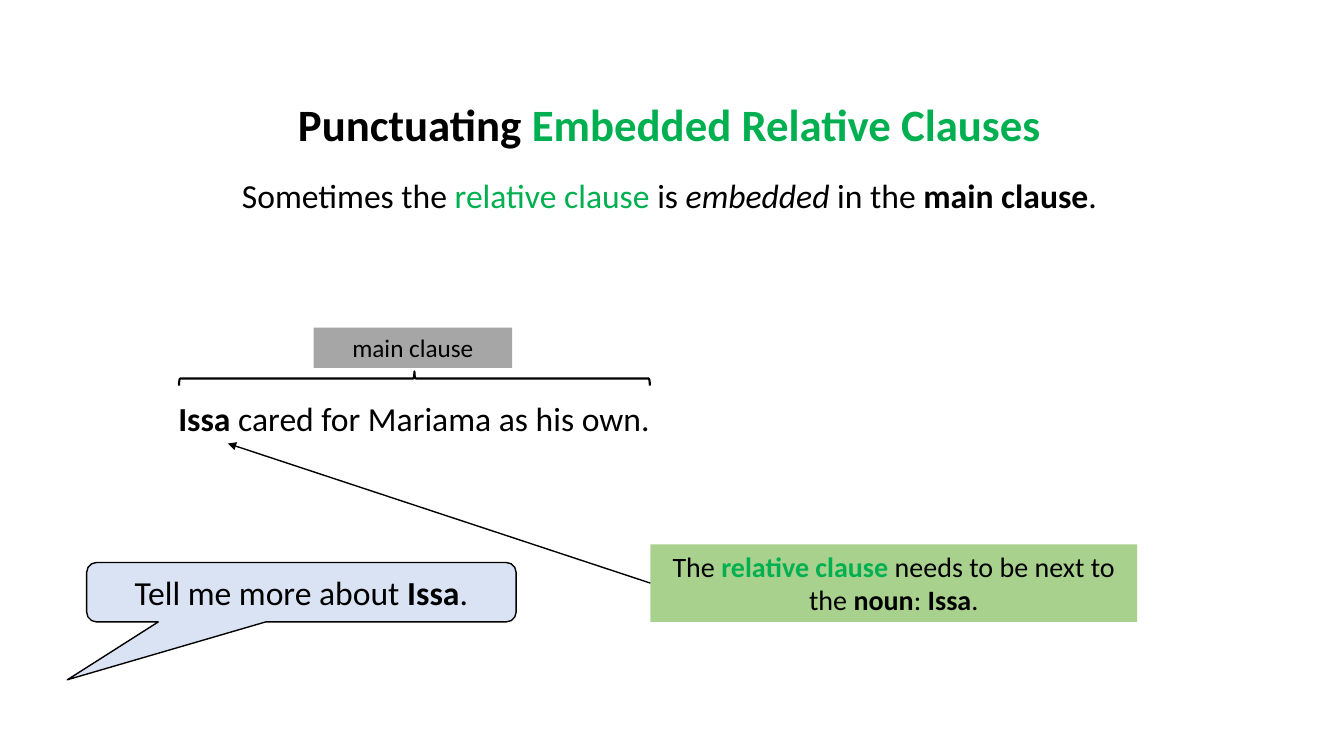
from pptx import Presentation
from pptx.dml.color import RGBColor
from pptx.enum import shapes, text
from pptx.oxml import ns
from pptx.util import Inches, Pt
from lxml import etree

HUES = {"ink": "000000", "green": "00B050", "gray": "A6A6A6",
        "pale": "DAE3F3", "lime": "A9D18E"}
FONT = "Calibri"
KINDS = shapes.MSO_SHAPE
BOLD = {"bold": True}
GREEN = {"hue": "green"}
STRONG = {"hue": "green", "bold": True}

LABELS = {
    "title": {"at": (0.86, 0.91, 11.56, 0.64), "size": 32, "runs": [
        ("Punctuating ", BOLD), ("Embedded Relative Clauses", STRONG)]},
    "intro": {"at": (0.86, 1.69, 11.56, 0.5), "size": 24, "runs": [
        ("Sometimes the ", {}), ("relative clause ", GREEN), ("is ", {}),
        ("embedded", {"italic": True}), (" in the ", {}),
        ("main clause", BOLD), (".", {})]},
    "sentence": {"at": (1.67, 3.9, 4.93, 0.5), "size": 24, "align": "LEFT",
                 "runs": [("Issa ", BOLD), ("cared for Mariama as his own.", {})]},
    "brace": {"at": (4.04, 1.42, 0.14, 4.67), "kind": KINDS.LEFT_BRACE,
              "line": 1.5, "turn": 90},
    "main": {"at": (3.11, 3.25, 1.97, 0.4), "size": 18, "kind": KINDS.RECTANGLE,
             "fill": "gray", "runs": [("main clause", {})]},
    "prompt": {"at": (0.86, 5.58, 4.26, 0.59), "size": 24,
               "kind": KINDS.ROUNDED_RECTANGULAR_CALLOUT,
               "fill": "pale", "line": 1, "adjust": (-0.545, 1.472, 0.167),
               "anchor": "MIDDLE", "runs": [
                   ("Tell me more about ", {}), ("Issa", BOLD), (".", {})]},
    "rule": {"at": (6.45, 5.4, 4.83, 0.77), "size": 20, "kind": KINDS.RECTANGLE,
             "fill": "lime", "runs": [
                 ("The ", {}), ("relative clause ", STRONG),
                 ("needs to be next to the ", {}), ("noun", BOLD), (": ", {}),
                 ("Issa", BOLD), (".", {})]},
}
ARROW = {"from": "rule", "side": 1, "to": (2.26, 4.4), "width": 1}


def color(name):
    return RGBColor.from_string(HUES[name])


def write(shape, label):
    frame = shape.text_frame
    frame.word_wrap = True
    frame.vertical_anchor = getattr(text.MSO_ANCHOR, label.get("anchor", "TOP"))
    line = frame.paragraphs[0]
    line.alignment = getattr(text.PP_ALIGN, label.get("align", "CENTER"))
    for words, style in label["runs"]:
        run = line.add_run()
        run.text = words
        look = {"name": FONT, "size": Pt(label["size"]), **style}
        run.font.color.rgb = color(look.pop("hue", "ink"))
        for key, value in look.items():
            setattr(run.font, key, value)


def paint(shape, label):
    shape.shadow.inherit = False
    shape.rotation = label.get("turn", 0)
    for spot, value in enumerate(label.get("adjust", ())):
        shape.adjustments[spot] = value
    if "fill" in label:
        shape.fill.solid()
        shape.fill.fore_color.rgb = color(label["fill"])
    else:
        shape.fill.background()
    if "line" in label:
        shape.line.color.rgb = color("ink")
        shape.line.width = Pt(label["line"])
    else:
        shape.line.fill.background()


def place(slide, label):
    box = [Inches(n) for n in label["at"]]
    if "kind" in label:
        shape = slide.shapes.add_shape(label["kind"], *box)
        paint(shape, label)
    else:
        shape = slide.shapes.add_textbox(*box)
    if "runs" in label:
        write(shape, label)
    return shape


def point(slide, parts):
    start = parts[ARROW["from"]]
    end = [Inches(n) for n in ARROW["to"]]
    arrow = slide.shapes.add_connector(
        shapes.MSO_CONNECTOR.STRAIGHT, start.left, start.top, *end)
    arrow.begin_connect(start, ARROW["side"])
    arrow.line.color.rgb = color("ink")
    arrow.line.width = Pt(ARROW["width"])
    etree.SubElement(arrow.line._get_or_add_ln(), ns.qn("a:tailEnd"), type="triangle")
    etree.SubElement(arrow._element.spPr, ns.qn("a:effectLst"))


def main():
    deck = Presentation()
    deck.slide_width, deck.slide_height = Inches(13.33), Inches(7.5)
    slide = deck.slides.add_slide(deck.slide_layouts[6])
    parts = {name: place(slide, label) for name, label in LABELS.items()}
    point(slide, parts)
    deck.save("out.pptx")


if __name__ == "__main__":
    main()
